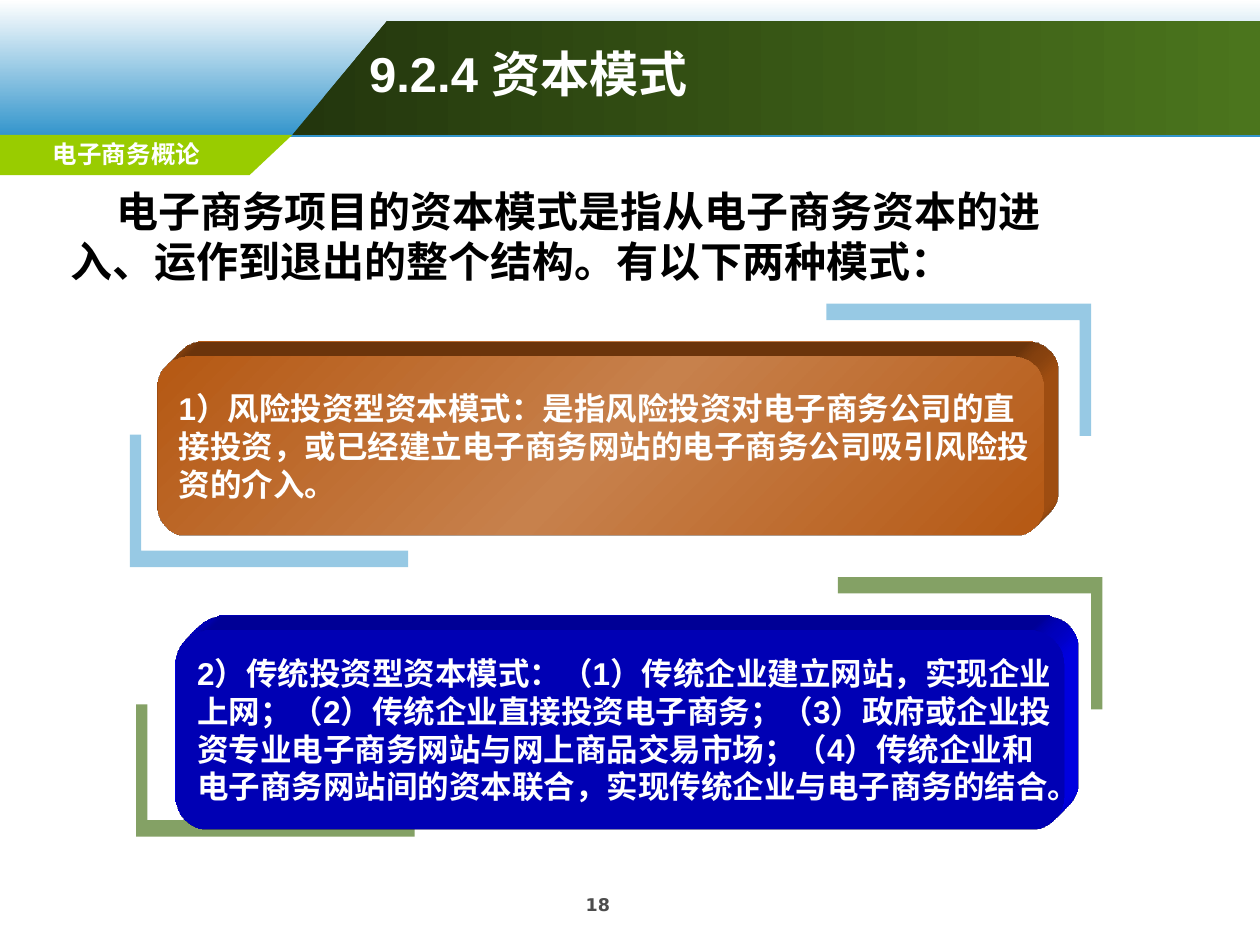
from lxml.etree import SubElement
from pptx import Presentation
from pptx.dml.color import RGBColor
from pptx.enum.shapes import MSO_SHAPE as Shape
from pptx.enum.text import MSO_ANCHOR as Anchor, PP_ALIGN as Align
from pptx.oxml.ns import qn
from pptx.util import Inches, Pt

TITLE = "9.2.4 资本模式"
COURSE = "电子商务概论"
NUMBER = "18"
INTRO = "电子商务项目的资本模式是指从电子商务资本的进入、运作到退出的整个结构。有以下两种模式："
MODES = [
    {"box": (1.25, 2.83, 7.03, 1.42), "fills": ["B55813", "C7814C", "B55813"],
     "low": (1.03, 4.5), "high": (8.66, 2.41), "bracket": "3194CB", "opacity": 50,
     "lines": ["1）风险投资型资本模式：是指风险投资对电子商务公司的直",
               "接投资，或已经建立电子商务网站的电子商务公司吸引风险投",
               "资的介入。"]},
    {"box": (1.39, 5, 7.05, 1.58), "fills": ["0000FF"],
     "low": (1.08, 6.64), "high": (8.75, 4.58), "bracket": "4B751D", "opacity": 68,
     "lines": ["2）传统投资型资本模式：（1）传统企业建立网站，实现企业",
               "上网；（2）传统企业直接投资电子商务；（3）政府或企业投",
               "资专业电子商务网站与网上商品交易市场；（4）传统企业和",
               "电子商务网站间的资本联合，实现传统企业与电子商务的结合。"]},
]


def color(value):
    return RGBColor.from_string(value)


def paint(shape, fills, angle=0, opacity=100):
    shape.shadow.inherit = False
    shape.line.fill.background()
    if len(fills) == 1:
        shape.fill.solid()
        shape.fill.fore_color.rgb = color(fills[0])
        if opacity < 100:
            tint = shape._element.spPr.find(".//" + qn("a:srgbClr"))
            SubElement(tint, qn("a:alpha"), val=str(opacity * 1000))
        return
    shape.fill.gradient()
    shape.fill.gradient_angle = -angle % 360
    stops = shape._element.spPr.find(".//" + qn("a:gsLst"))
    for stop in list(stops):
        stops.remove(stop)
    for index, value in enumerate(fills):
        position = 100000 * index // (len(fills) - 1)
        stop = SubElement(stops, qn("a:gs"), pos=str(position))
        SubElement(stop, qn("a:srgbClr"), val=value)


def extrude(shape, value):
    properties = shape._element.spPr
    scene = SubElement(properties, qn("a:scene3d"))
    SubElement(scene, qn("a:camera"), prst="legacyObliqueTopRight")
    SubElement(scene, qn("a:lightRig"), rig="legacyFlat3", dir="b")
    solid = SubElement(properties, qn("a:sp3d"), extrusionH=str(Pt(24)),
                       prstMaterial="legacyMatte")
    tint = SubElement(solid, qn("a:extrusionClr"))
    SubElement(tint, qn("a:srgbClr"), val=value)


def polygon(shapes, points):
    corners = [(Inches(x), Inches(y)) for x, y in points]
    builder = shapes.build_freeform(*corners[0])
    builder.add_line_segments(corners[1:])
    return builder.convert_to_shape()


def bracket(shapes, corner, width, sign, mode):
    height, bar, foot = 1.05, 0.09, 0.13
    outline = [(0, 0), (width, 0), (width, -foot), (bar, -foot), (bar, -height), (0, -height)]
    points = [(corner[0] + sign * x, corner[1] + sign * y) for x, y in outline]
    paint(polygon(shapes, points), [mode["bracket"]], opacity=mode["opacity"])


def write(frame, lines, size, value="FFFFFF", font="Arial", align=Align.LEFT,
          anchor=Anchor.TOP, wrap=True):
    frame.word_wrap = wrap
    frame.vertical_anchor = anchor
    for index, line in enumerate(lines):
        para = frame.add_paragraph() if index else frame.paragraphs[0]
        para.alignment = align
        span = para.add_run()
        span.text = line
        span.font.size, span.font.bold, span.font.name = Pt(size), True, font
        span.font.color.rgb = color(value)


def label(page, place, line, size, **style):
    box = page.shapes.add_textbox(*map(Inches, place))
    write(box.text_frame, [line], size, **style)
    return box


def header(page):
    sky = page.shapes.add_shape(Shape.RECTANGLE, 0, 0, Inches(10), Inches(1.09))
    paint(sky, ["FFFFFF", "3194CB"], 90)
    band = polygon(page.shapes, [(2.32, 1.07), (10, 1.07), (10, 0.17), (3.07, 0.17)])
    paint(band, ["23360D", "4B751D"])
    tab = polygon(page.shapes, [(0, 1.07), (2.32, 1.07), (1.98, 1.39), (0, 1.39)])
    paint(tab, ["99CC00"])
    label(page, (0.04, 1.05, 1.93, 0.31), COURSE, 14, font="DejaVu Sans", align=Align.CENTER)
    title = page.shapes.title
    title.left, title.top, title.width, title.height = map(Inches, (2.83, 0.25, 6.89, 0.66))
    write(title.text_frame, [TITLE], 28, anchor=Anchor.MIDDLE)
    page.shapes._spTree.append(title._element)


def mode_panel(page, mode):
    shapes = page.shapes.add_group_shape().shapes
    bracket(shapes, mode["low"], 2.21, 1, mode)
    bracket(shapes, mode["high"], 2.1, -1, mode)
    panel = shapes.add_shape(Shape.ROUNDED_RECTANGLE, *map(Inches, mode["box"]))
    paint(panel, mode["fills"], 45)
    extrude(panel, mode["fills"][0])
    write(panel.text_frame, mode["lines"], 18, anchor=Anchor.MIDDLE, wrap=False)


def main():
    """Build the capital model slide."""
    deck = Presentation()
    deck.slide_width, deck.slide_height = Inches(10), Inches(7.5)
    page = deck.slides.add_slide(deck.slide_layouts[5])
    header(page)
    label(page, (3.58, 7.05, 2.33, 0.33), NUMBER, 10, value="4D4D4D",
          font="DejaVu Sans", align=Align.CENTER)
    for mode in MODES:
        mode_panel(page, mode)
    intro = label(page, (0.08, 1.42, 8.53, 0.58), INTRO, 24, value="000000")
    indent = intro.text_frame.paragraphs[0]._p.get_or_add_pPr()
    indent.set("marL", str(Inches(0.38)))
    indent.set("indent", str(Inches(0.37)))
    deck.save("out.pptx")


if __name__ == "__main__":
    main()
